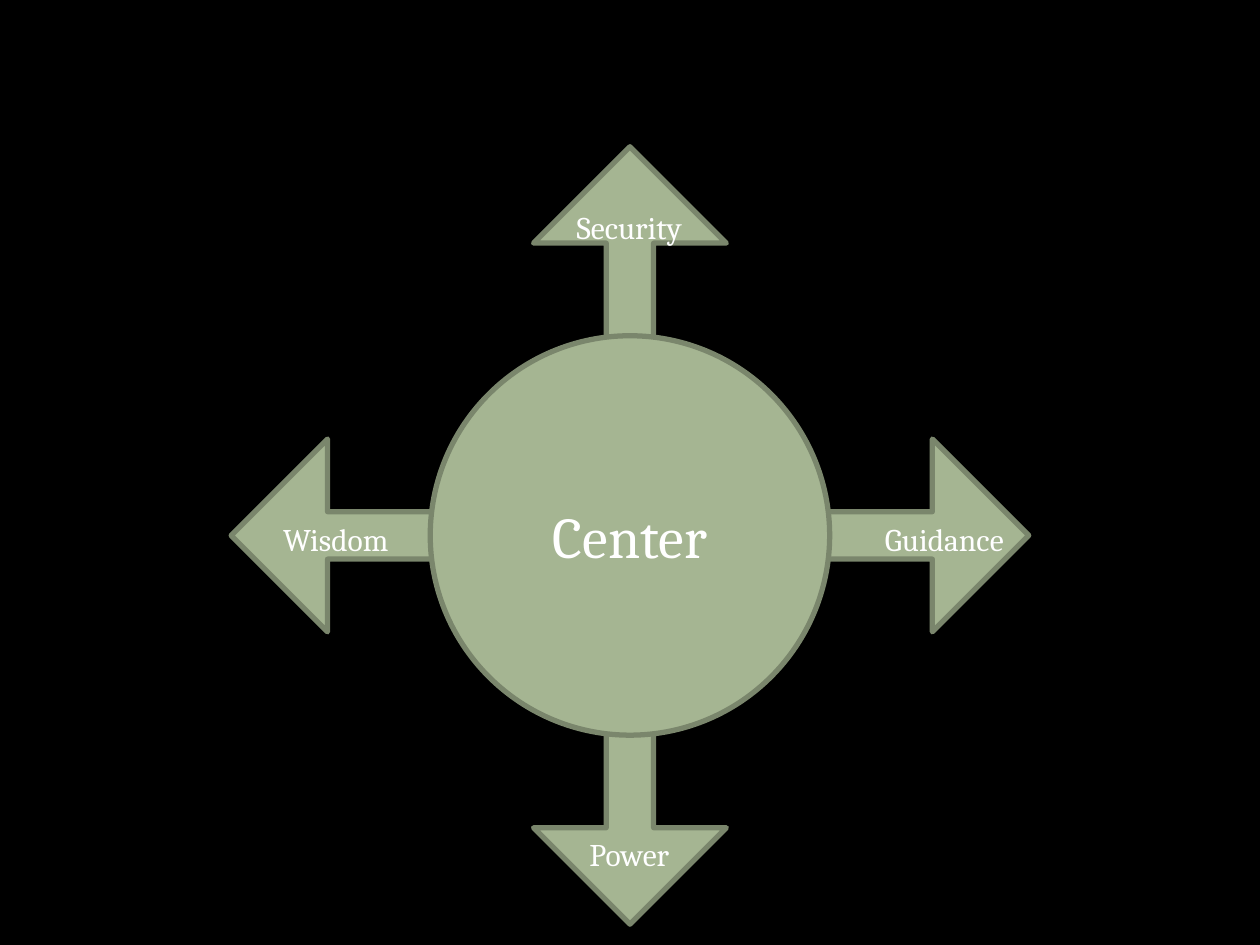
"""Build a slide with a central circle and four labelled arrows."""
from pptx import Presentation
from pptx.dml.color import RGBColor
from pptx.enum import shapes, text
from pptx.util import Inches, Pt

BLACK = RGBColor(0x00, 0x00, 0x00)
WHITE = RGBColor(0xFF, 0xFF, 0xFF)
SAGE = RGBColor(0xA5, 0xB5, 0x92)
DARK_SAGE = RGBColor(0x7A, 0x86, 0x6C)
FONT = "Cambria"

CENTER_X, CENTER_Y = 5, 4.25
ARROW_SIZE = (6.33, 6.17)
ARROW_ADJUSTMENTS = (0.061, 0.124, 0.124)
CIRCLE_SIZE = (3.17, 3.17)
LABEL_WIDTH, LABEL_HEIGHT = 1.33, 0.4
LABELS = [
    ("Security", 4.33, 1.6),
    ("Power", 4.33, 6.58),
    ("Guidance", 6.83, 4.08),
    ("Wisdom", 2, 4.08),
]


def add_centered_shape(slide, kind, size):
    width, height = size
    shape = slide.shapes.add_shape(
        kind,
        Inches(CENTER_X - width / 2),
        Inches(CENTER_Y - height / 2),
        Inches(width),
        Inches(height),
    )
    shape.shadow.inherit = False
    shape.fill.solid()
    shape.fill.fore_color.rgb = SAGE
    shape.line.color.rgb = DARK_SAGE
    shape.line.width = Pt(3)
    return shape


def write_text(shape, words, size):
    shape.text_frame.word_wrap = True
    paragraph = shape.text_frame.paragraphs[0]
    paragraph.text = words
    paragraph.alignment = text.PP_ALIGN.CENTER
    font = paragraph.runs[0].font
    font.name = FONT
    font.size = Pt(size)
    font.color.rgb = WHITE


def main():
    presentation = Presentation()
    presentation.slide_width = Inches(10)
    presentation.slide_height = Inches(7.5)
    slide = presentation.slides.add_slide(presentation.slide_layouts[6])
    slide.background.fill.solid()
    slide.background.fill.fore_color.rgb = BLACK

    arrows = add_centered_shape(slide, shapes.MSO_SHAPE.QUAD_ARROW, ARROW_SIZE)
    for index, value in enumerate(ARROW_ADJUSTMENTS):
        arrows.adjustments[index] = value

    circle = add_centered_shape(slide, shapes.MSO_SHAPE.OVAL, CIRCLE_SIZE)
    circle.text_frame.vertical_anchor = text.MSO_ANCHOR.MIDDLE
    write_text(circle, "Center", 33)

    for words, left, top in LABELS:
        label = slide.shapes.add_textbox(
            Inches(left), Inches(top), Inches(LABEL_WIDTH), Inches(LABEL_HEIGHT)
        )
        label.text_frame.auto_size = text.MSO_AUTO_SIZE.SHAPE_TO_FIT_TEXT
        write_text(label, words, 18)

    presentation.save("out.pptx")


if __name__ == "__main__":
    main()
